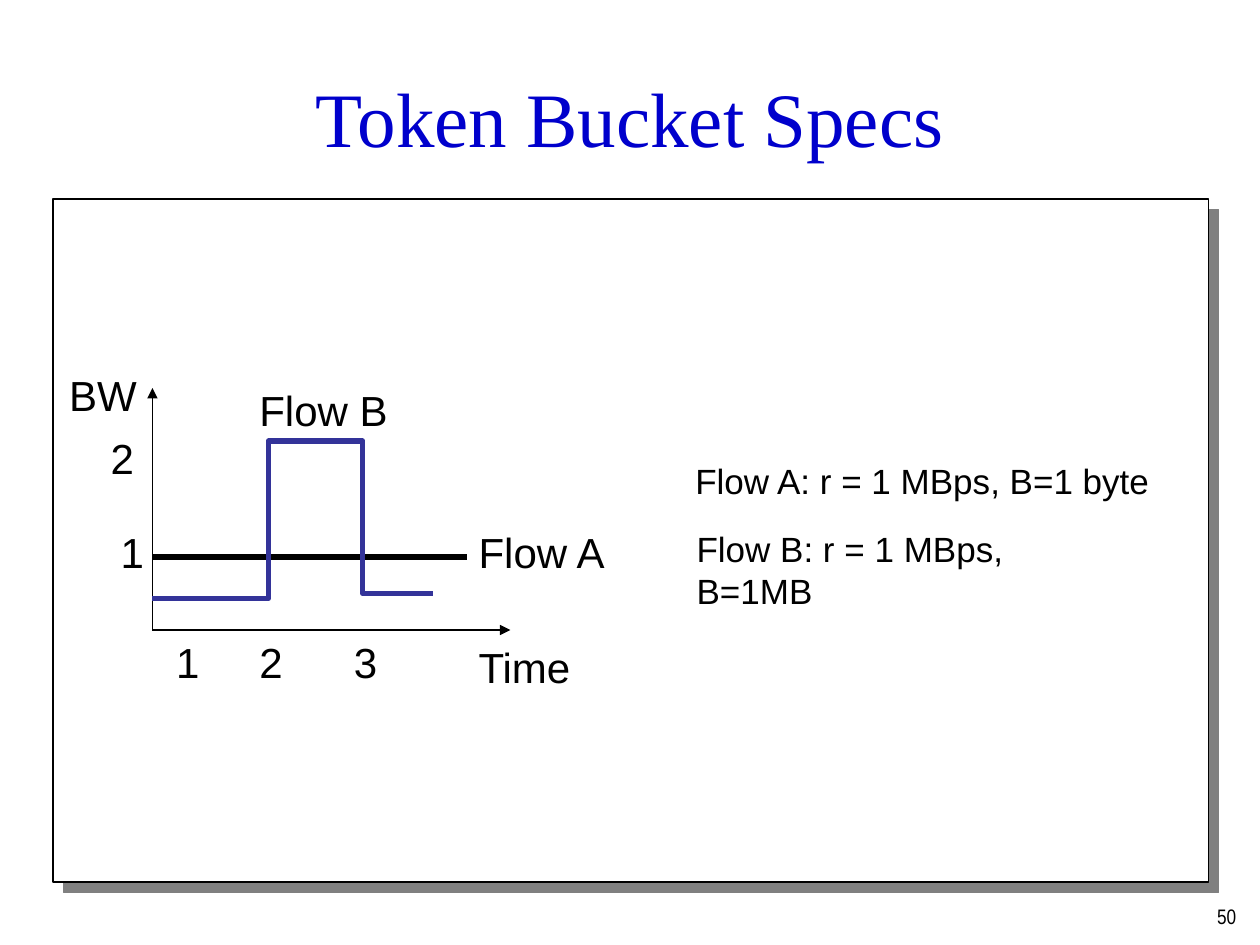
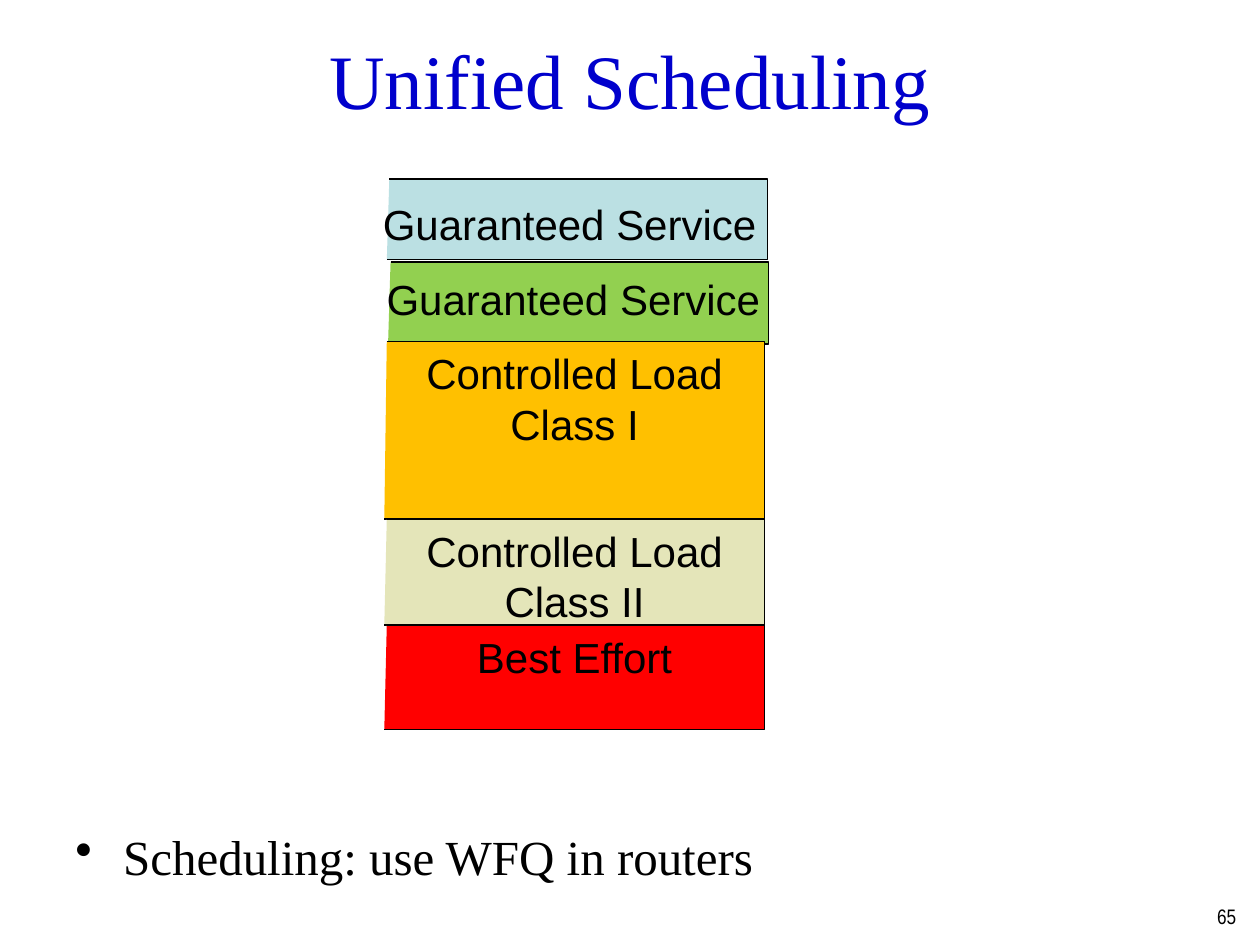
"""Build two slides on token buckets and unified scheduling."""
from lxml.etree import SubElement
from pptx import Presentation
from pptx.dml.color import RGBColor
from pptx.enum.shapes import MSO_CONNECTOR, MSO_SHAPE
from pptx.enum.text import MSO_ANCHOR, MSO_AUTO_SIZE, PP_ALIGN
from pptx.oxml.ns import qn
from pptx.util import Pt

PX = 9144
COLORS = {
    "ink": "000000", "title": "0000CC", "paper": "FFFFFF", "shade": "808080",
    "flow": "333399", "sky": "BBE0E3", "green": "92D050", "amber": "FFC000",
    "sand": "E4E5B9", "red": "FF0000",
}
SERIF = "Times New Roman"


def color(name):
    """Return the named colour."""
    return RGBColor.from_string(COLORS[name])


def scale(*sizes):
    """Turn px into EMU."""
    return [size * PX for size in sizes]


def write(frame, text, font="Arial", size=24, ink="ink",
          align=PP_ALIGN.LEFT, anchor=MSO_ANCHOR.TOP, wrap=True):
    """Fill a text frame, one paragraph for each line of text."""
    frame.word_wrap = wrap
    frame.auto_size = MSO_AUTO_SIZE.NONE if wrap else MSO_AUTO_SIZE.SHAPE_TO_FIT_TEXT
    frame.vertical_anchor = anchor
    frame.text = text
    for para in frame.paragraphs:
        para.alignment = align
        for run in para.runs:
            run.font.name = font
            run.font.size = Pt(size)
            run.font.color.rgb = color(ink)


def label(slide, text, box, **style):
    """Add a text box and return its frame."""
    frame = slide.shapes.add_textbox(*scale(*box)).text_frame
    write(frame, text, **style)
    return frame


def stroke(line, ink="ink", width=0.75):
    """Set the colour and width of a line."""
    line.color.rgb = color(ink)
    line.width = Pt(width)


def draw(slide, points, fill=None, ink="ink", width=0.75):
    """Add an open outline through the points."""
    path = slide.shapes.build_freeform(*points[0], scale=PX)
    path.add_line_segments(points[1:], close=False)
    shape = path.convert_to_shape()
    shape.shadow.inherit = False
    if fill:
        shape.fill.solid()
        shape.fill.fore_color.rgb = color(fill)
    else:
        shape.fill.background()
    stroke(shape.line, ink, width)
    return shape


def rule(slide, start, end, width=0.75, arrow=False):
    """Add a straight line, with an arrowhead if asked."""
    link = slide.shapes.add_connector(MSO_CONNECTOR.STRAIGHT, *scale(*start, *end))
    stroke(link.line, width=width)
    if arrow:
        SubElement(link.line._get_or_add_ln(), qn("a:tailEnd"), type="triangle")
    SubElement(link._element.spPr, qn("a:effectLst"))


def start(deck, title, top, number):
    """Add a slide with its title and page number."""
    slide = deck.slides.add_slide(deck.slide_layouts[5])
    head = slide.shapes.title
    head.left, head.top, head.width, head.height = scale(50, top, 900, 125)
    write(head.text_frame, title, font=SERIF, size=44, ink="title",
          align=PP_ALIGN.CENTER, anchor=MSO_ANCHOR.MIDDLE)
    label(slide, str(number), (783, 692, 208, 50), font="Arial Narrow", size=12,
          align=PP_ALIGN.RIGHT, anchor=MSO_ANCHOR.BOTTOM)
    return slide


def panel(slide, box):
    """Add a white panel with a hard shadow."""
    shape = slide.shapes.add_shape(MSO_SHAPE.RECTANGLE, *scale(*box))
    shape.fill.solid()
    shape.fill.fore_color.rgb = color("paper")
    stroke(shape.line)
    shape.shadow.inherit = False
    effects = shape._element.spPr.find(qn("a:effectLst"))
    shade = SubElement(effects, qn("a:outerShdw"), blurRad="0",
                       dist=str(Pt(8.5)), dir="2700000", algn="ctr", rotWithShape="0")
    SubElement(shade, qn("a:srgbClr"), val=COLORS["shade"])


def graph(slide, box):
    """Draw both flows as bandwidth over time."""
    left, top, width, height = box
    base = top + height
    rule(slide, (left, base), (left, top), arrow=True)
    rule(slide, (left, base), (left + width, base), arrow=True)
    rule(slide, (left, base - 58), (left + 250, base - 58), width=3)
    steps = [(0, 25), (92, 25), (92, 150), (167, 150), (167, 29), (223, 29)]
    draw(slide, [(left + x, base - y) for x, y in steps], ink="flow", width=3)
    marks = [
        ("BW", -76, -212, 74), ("2", -43, -162, 39), ("1", -35, -87, 39),
        ("1", 9, 0, 39), ("2", 75, 0, 39), ("3", 150, 0, 39),
        ("Time", 249, 4, 94), ("Flow A", 249, -87, 122), ("Flow B", 75, -200, 122),
    ]
    for text, x, y, span in marks:
        label(slide, text, (left + x, base + y, span, 50), wrap=False)


def specs(slide, box):
    """State the rate and burst of each flow."""
    left, top, width, height = box
    label(slide, "Flow A: r = 1 MBps, B=1 byte", (left, top, width, height),
          size=20, wrap=False)
    label(slide, "Flow B: r = 1 MBps, B=1MB", (left + 1, top + 54, 340, 76), size=20)


def band(slide, box, fill, text=""):
    """Draw one class of service with a slanted left edge."""
    left, top, width, height = box
    right, base = left + width, top + height
    shape = draw(slide, [(left + 2, top), (right, top), (right, base), (left, base)], fill)
    if text:
        write(shape.text_frame, text, align=PP_ALIGN.CENTER)


def stack(slide, box):
    """Stack the classes of service from first to last."""
    left, top, width = box
    bands = [
        (2, 0, 64, "sky", ""),
        (3, 66, 65, "green", ""),
        (0, 129, 141, "amber", "Controlled Load\nClass I"),
        (0, 270, 84, "sand", "Controlled Load\nClass II"),
        (0, 354, 83, "red", "Best Effort"),
    ]
    for shift, drop, height, fill, text in bands:
        band(slide, (left + shift, top + drop, width, height), fill, text)
    for shift, drop in ((-11, 11), (-8, 70)):
        label(slide, "Guaranteed Service", (left + shift, top + drop, 320, 50), wrap=False)


def bullet(slide, text, box):
    """Add one bulleted line."""
    para = label(slide, text, box, font=SERIF, size=28).paragraphs[0]
    para.line_spacing = 0.9
    props = para._p.get_or_add_pPr()
    props.set("marL", str(38 * PX))
    props.set("indent", str(-38 * PX))
    SubElement(props, qn("a:buChar"), char="•")


def bucket(deck):
    """Build the token bucket slide."""
    slide = start(deck, "Token Bucket Specs", 30, 50)
    panel(slide, (42, 158, 917, 542))
    graph(slide, (121, 308, 284, 192))
    specs(slide, (542, 360, 381, 43))


def unify(deck):
    """Build the scheduling slide."""
    slide = start(deck, "Unified Scheduling", 0, 65)
    stack(slide, (305, 142, 302))
    bullet(slide, "Scheduling: use WFQ in routers", (50, 656, 900, 94))


def main():
    """Build and save the deck."""
    deck = Presentation()
    deck.slide_width, deck.slide_height = scale(1000, 750)
    bucket(deck)
    unify(deck)
    deck.save("out.pptx")


if __name__ == "__main__":
    main()
